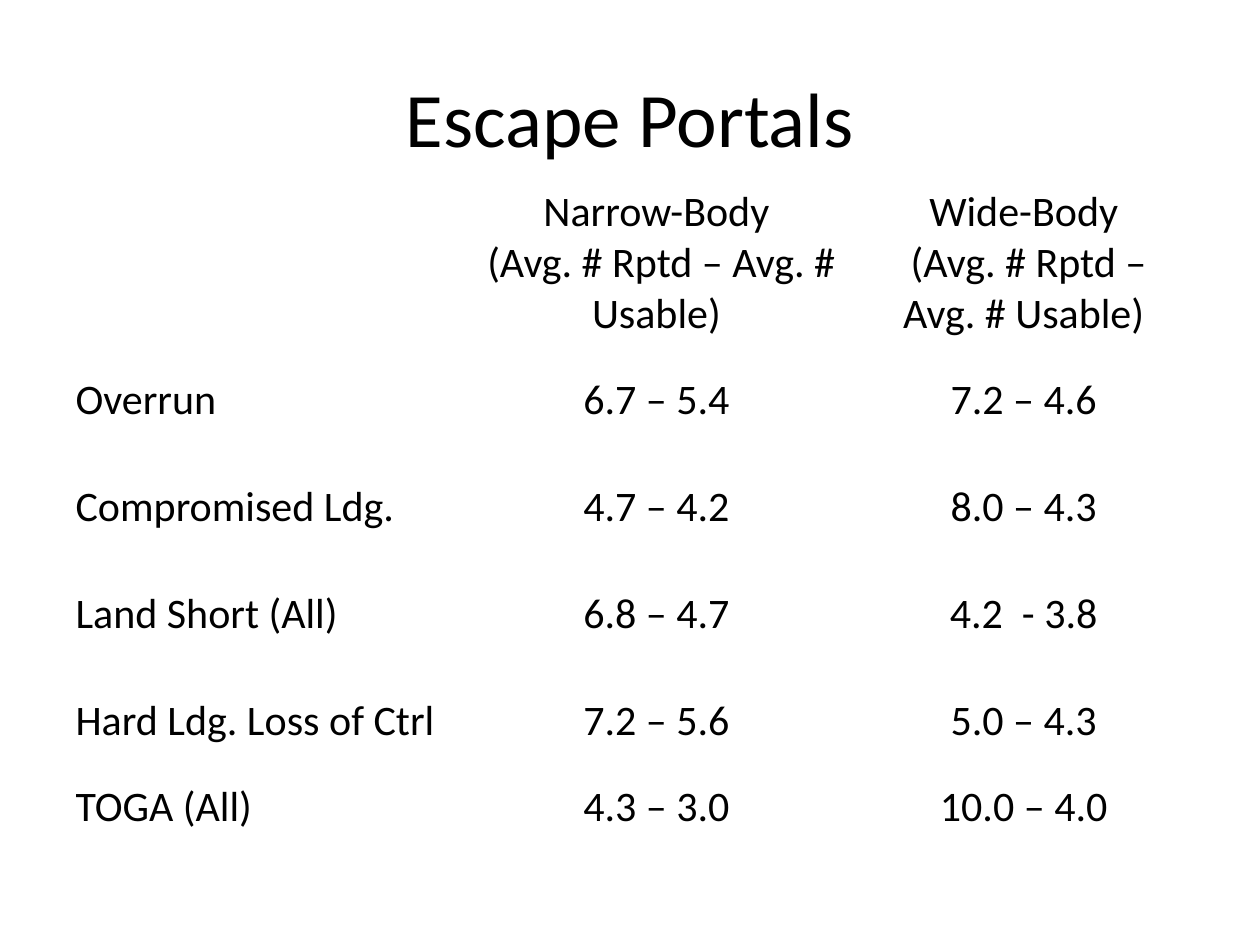
from dataclasses import dataclass

from pptx import Presentation
from pptx.dml.color import RGBColor
from pptx.enum.text import MSO_ANCHOR, PP_ALIGN
from pptx.util import Inches, Pt

LEFT, CENTER = PP_ALIGN.LEFT, PP_ALIGN.CENTER
MIDDLE, BOTTOM = MSO_ANCHOR.MIDDLE, MSO_ANCHOR.BOTTOM
TITLE_ONLY = 5


@dataclass(frozen=True)
class Theme:
    font: str = "Calibri"
    text: RGBColor = RGBColor(0, 0, 0)
    title_size: int = 44
    table_size: int = 24


THEME = Theme()

COL_WIDTHS = [3.17, 3.08, 2.75]
ROW_HEIGHTS = [1.34] + [0.85] * 4 + [0.5]
MEASURE = " (Avg. # Rptd – Avg. # Usable)"
ROWS = [
    ["", f"Narrow-Body\n{MEASURE}", f"Wide-Body\n{MEASURE}"],
    ["Overrun", "6.7 – 5.4", "7.2 – 4.6"],
    ["Compromised Ldg.", "4.7 – 4.2", "8.0 – 4.3"],
    ["Land Short (All)", "6.8 – 4.7", "4.2  - 3.8"],
    ["Hard Ldg. Loss of Ctrl", "7.2 – 5.6", "5.0 – 4.3"],
    ["TOGA (All)", "4.3 – 3.0", "10.0 – 4.0"],
]


def set_text(tf, text, size, align):
    tf.text = text
    for p in tf.paragraphs:
        p.alignment = align
        for r in p.runs:
            r.font.name = THEME.font
            r.font.size = Pt(size)
            r.font.color.rgb = THEME.text


def add_title(slide, text):
    sp = slide.shapes.title
    sp.left, sp.top = Inches(0.5), Inches(0.3)
    sp.width, sp.height = Inches(9), Inches(1.25)
    sp.text_frame.vertical_anchor = MIDDLE
    set_text(sp.text_frame, text, THEME.title_size, CENTER)


def add_portal_table(slide):
    table = slide.shapes.add_table(
        len(ROWS), len(COL_WIDTHS), Inches(0.5), Inches(1.41),
        Inches(sum(COL_WIDTHS)), Inches(sum(ROW_HEIGHTS))).table
    table.first_row = table.horz_banding = False
    for column, width in zip(table.columns, COL_WIDTHS):
        column.width = Inches(width)
    for row, height in zip(table.rows, ROW_HEIGHTS):
        row.height = Inches(height)

    # Header sits at the bottom of its row; labels are left, values centred
    for i, values in enumerate(ROWS):
        for j, value in enumerate(values):
            cell = table.cell(i, j)
            cell.fill.background()
            cell.vertical_anchor = MIDDLE if i else BOTTOM
            set_text(cell.text_frame, value, THEME.table_size,
                     CENTER if j else LEFT)


def main():
    prs = Presentation()
    prs.slide_width, prs.slide_height = Inches(10), Inches(7.5)
    slide = prs.slides.add_slide(prs.slide_layouts[TITLE_ONLY])
    add_title(slide, "Escape Portals")
    add_portal_table(slide)
    prs.save("out.pptx")


if __name__ == "__main__":
    main()
